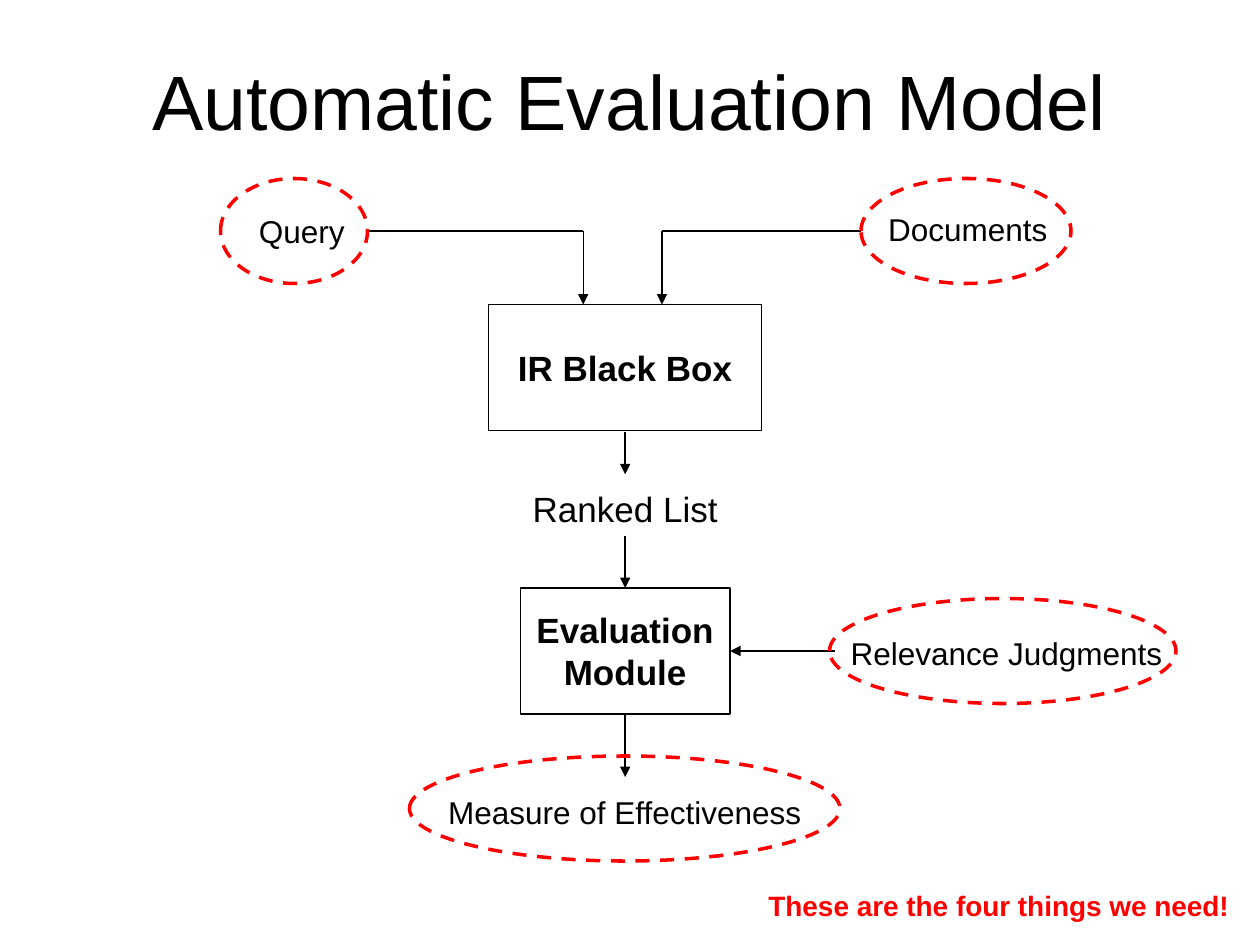
import pptx
import pptx.dml.color
import pptx.enum.dml
import pptx.enum.shapes
import pptx.enum.text
import pptx.oxml.ns
import pptx.util
from lxml import etree

Pt = pptx.util.Pt
ALIGN = pptx.enum.text.PP_ALIGN
ANCHOR = pptx.enum.text.MSO_ANCHOR
SHAPE = pptx.enum.shapes.MSO_SHAPE
BLACK = pptx.dml.color.RGBColor(0, 0, 0)
RED = pptx.dml.color.RGBColor(255, 0, 0)
CENTER_X = 357.25
INPUT_Y = 132
BOX_TOP = 174


def write_text(shape, text, size, color=BLACK, bold=False,
               align=ALIGN.CENTER, anchor=ANCHOR.TOP, wrap=False):
    frame = shape.text_frame
    frame.word_wrap = wrap
    frame.vertical_anchor = anchor
    frame.text = text
    for paragraph in frame.paragraphs:
        paragraph.alignment = align
        paragraph.font.name = "Arial"
        paragraph.font.size = Pt(size)
        paragraph.font.bold = bold
        paragraph.font.color.rgb = color


def add_title(page, bounds, text):
    title = page.shapes.add_textbox(*map(Pt, bounds))
    write_text(title, text, 44, anchor=ANCHOR.MIDDLE, wrap=True)


def add_label(page, bounds, text, size, **style):
    label = page.shapes.add_textbox(*map(Pt, bounds))
    write_text(label, text, size, **style)
    label.text_frame.auto_size = (
        pptx.enum.text.MSO_AUTO_SIZE.SHAPE_TO_FIT_TEXT)


def add_outline(page, kind, bounds, color, width):
    outline = page.shapes.add_shape(kind, *map(Pt, bounds))
    outline.shadow.inherit = False
    outline.fill.background()
    outline.line.color.rgb = color
    outline.line.width = Pt(width)
    return outline


def add_module(page, bounds, text):
    box = add_outline(page, SHAPE.RECTANGLE, bounds, BLACK, 0.75)
    write_text(box, text, 20, bold=True, anchor=ANCHOR.MIDDLE)


def add_highlight(page, bounds):
    ellipse = add_outline(page, SHAPE.OVAL, bounds, RED, 2)
    ellipse.line.dash_style = pptx.enum.dml.MSO_LINE.DASH


def add_line(page, start, end, arrow=True):
    line = page.shapes.add_connector(
        pptx.enum.shapes.MSO_CONNECTOR.STRAIGHT, *map(Pt, start + end))
    line.line.color.rgb = BLACK
    line.line.width = Pt(0.75)
    if arrow:
        etree.SubElement(line.line._get_or_add_ln(),
                         pptx.oxml.ns.qn("a:tailEnd"), type="triangle")
    etree.SubElement(line._element.spPr, pptx.oxml.ns.qn("a:effectLst"))


def add_input_path(page, start_x, turn_x):
    corner = (turn_x, INPUT_Y)
    add_line(page, (start_x, INPUT_Y), corner, arrow=False)
    add_line(page, corner, (turn_x, BOX_TOP))


def main():
    deck = pptx.Presentation()
    deck.slide_width, deck.slide_height = Pt(720), Pt(540)
    page = deck.slides.add_slide(deck.slide_layouts[6])

    add_title(page, (54, 12, 612, 90), "Automatic Evaluation Model")

    add_module(page, (279.25, BOX_TOP, 156, 72), "IR Black Box")
    add_module(page, (297.25, 336, 120, 72), "Evaluation\nModule")

    add_input_path(page, 210, 333.25)
    add_input_path(page, 492, 378.25)
    for top, bottom in ((247, 271), (306, 336), (408, 444)):
        add_line(page, (CENTER_X, top), (CENTER_X, bottom))
    add_line(page, (477, 372), (417.25, 372))

    add_label(page, (140.5, 117.5, 64, 29), "Query", 18)
    add_label(page, (500, 116.5, 106, 29), "Documents", 18)
    add_label(page, (297.25, 275, 120, 31), "Ranked List", 20)
    add_label(page, (240, 449.5, 234, 29), "Measure of Effectiveness", 18,
              wrap=True)
    add_label(page, (479, 358.5, 193, 29), "Relevance Judgments", 18,
              align=ALIGN.LEFT)

    for left, top, width in ((126, 102, 84), (492, 102, 120),
                             (474, 342, 198), (234, 432, 246)):
        add_highlight(page, (left, top, width, 60))
    add_label(page, (432, 504, 279, 26.5),
              "These are the four things we need!", 16,
              color=RED, bold=True, align=ALIGN.LEFT)

    deck.save("out.pptx")


if __name__ == "__main__":
    main()
